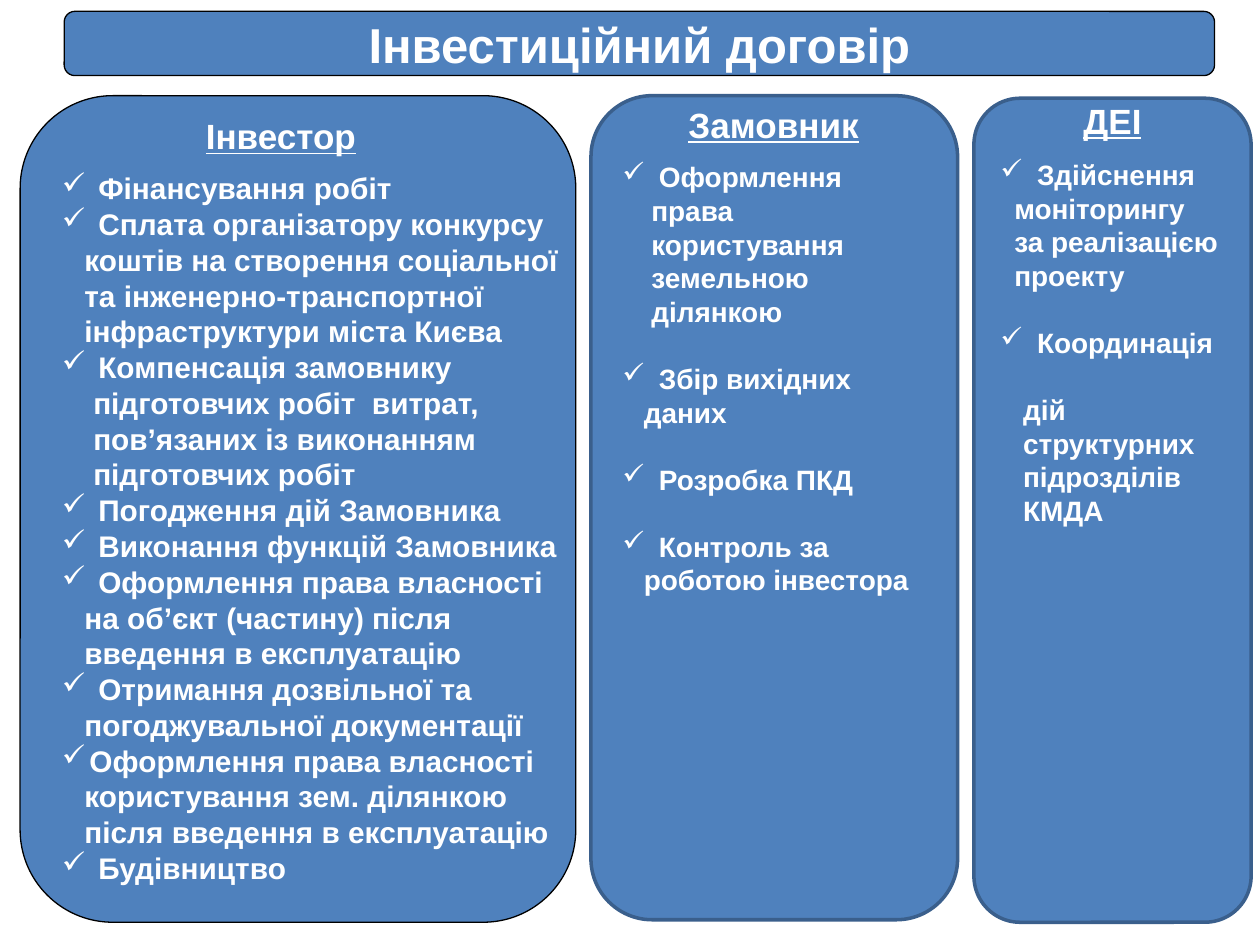
from pptx import Presentation
from pptx import util as u
from pptx.dml.color import RGBColor
from pptx.enum import shapes, text
from lxml import etree
from pptx.oxml import ns

BLUE = RGBColor(0x4F, 0x81, 0xBD)
EDGE = RGBColor(0x3A, 0x5F, 0x8C)
BLACK = RGBColor(0, 0, 0)
WHITE = RGBColor(0xFF, 0xFF, 0xFF)

ROUND = shapes.MSO_SHAPE.ROUNDED_RECTANGLE
PROCESS = shapes.MSO_SHAPE.FLOWCHART_ALTERNATE_PROCESS


class SlideBuilder:
    font = "Arial"
    text_indent = 0.29

    def __init__(self, presentation):
        self.slide = presentation.slides.add_slide(presentation.slide_layouts[5])

    def place(self, shape, box):
        shape.left, shape.top, shape.width, shape.height = map(u.Inches, box)

    def clear_margins(self, frame):
        frame.margin_left = frame.margin_right = 0
        frame.margin_top = frame.margin_bottom = 0
        frame.word_wrap = True

    def add_run(self, paragraph, words, size, underline=False):
        run = paragraph.add_run()
        run.text = words
        run.font.name = self.font
        run.font.size = u.Pt(size)
        run.font.bold = True
        run.font.underline = underline
        run.font.color.rgb = WHITE

    def panel(self, kind, box, line_color, line_width):
        shape = self.slide.shapes.add_shape(kind, *map(u.Inches, box))
        shape.shadow.inherit = False
        shape.fill.solid()
        shape.fill.fore_color.rgb = BLUE
        shape.line.color.rgb = line_color
        shape.line.width = u.Pt(line_width)

    def title(self, words, box):
        self.panel(PROCESS, box, BLACK, 0.75)
        title = self.slide.shapes.title
        self.place(title, box)
        tree = self.slide.shapes._spTree
        tree.append(title._element)
        frame = title.text_frame
        self.clear_margins(frame)
        frame.auto_size = text.MSO_AUTO_SIZE.NONE
        frame.vertical_anchor = text.MSO_ANCHOR.MIDDLE
        paragraph = frame.paragraphs[0]
        paragraph.alignment = text.PP_ALIGN.CENTER
        self.add_run(paragraph, words, 28)

    def text_box(self, box):
        frame = self.slide.shapes.add_textbox(*map(u.Inches, box)).text_frame
        self.clear_margins(frame)
        return frame

    def heading(self, words, center, top):
        width = 2
        frame = self.text_box((center - width / 2, top, width, 0.32))
        paragraph = frame.paragraphs[0]
        paragraph.alignment = text.PP_ALIGN.CENTER
        self.add_run(paragraph, words, 20, underline=True)

    def set_indent(self, paragraph, margin, bullet):
        properties = paragraph._p.get_or_add_pPr()
        properties.set("marL", str(u.Inches(margin)))
        properties.set("indent", str(-u.Inches(margin) if bullet else 0))
        if bullet:
            etree.SubElement(properties, ns.qn("a:buChar")).set("char", "✓")

    def checklist(self, box, items, size, spacing, gap=0):
        frame = self.text_box(box)
        paragraph = frame.paragraphs[0]
        for number, (margin, lines) in enumerate(items):
            for position, words in enumerate(lines):
                if number or position:
                    paragraph = frame.add_paragraph()
                bullet = position == 0
                paragraph.line_spacing = u.Pt(spacing)
                paragraph.space_before = u.Pt(gap if bullet and number else 0)
                first = 0.22 if words == TIGHT_ITEM else self.text_indent
                self.set_indent(paragraph, first if bullet else margin, bullet)
                self.add_run(paragraph, words, size)
        return frame


TIGHT_ITEM = "Оформлення права власності "

INVESTOR = [
    (0.18, ["Фінансування робіт"]),
    (0.18, ["Сплата організатору конкурсу", "коштів на створення соціальної",
            "та інженерно-транспортної", "інфраструктури міста Києва"]),
    (0.25, ["Компенсація замовнику", "підготовчих робіт  витрат,",
            "пов’язаних із виконанням", "підготовчих робіт"]),
    (0.18, ["Погодження дій Замовника"]),
    (0.18, ["Виконання функцій Замовника"]),
    (0.18, ["Оформлення права власності", "на об’єкт (частину) після",
            "введення в експлуатацію"]),
    (0.18, ["Отримання дозвільної та", "погоджувальної документації"]),
    (0.18, [TIGHT_ITEM, "користування зем. ділянкою",
            "після введення в експлуатацію"]),
    (0.18, ["Будівництво"]),
]
CUSTOMER = [
    (0.23, ["Оформлення", "права", "користування", "земельною", "ділянкою"]),
    (0.17, ["Збір вихідних", "даних"]),
    (0.17, ["Розробка ПКД"]),
    (0.17, ["Контроль за", "роботою інвестора"]),
]
DEPARTMENT = [
    (0.11, ["Здійснення", "моніторингу", "за реалізацією", "проекту"]),
    (0.18, ["Координація", "дій", "структурних", "підрозділів", "КМДА"]),
]


def main():
    presentation = Presentation()
    presentation.slide_width = u.Inches(10)
    presentation.slide_height = u.Inches(7.5)
    builder = SlideBuilder(presentation)

    builder.panel(ROUND, (4.69, 0.76, 2.91, 6.54), EDGE, 2)
    builder.panel(PROCESS, (0.16, 0.76, 4.41, 6.56), BLACK, 0.75)
    builder.panel(ROUND, (7.73, 0.78, 2.2, 6.54), EDGE, 2)
    builder.title("Інвестиційний договір", (0.51, 0.09, 9.13, 0.51))

    builder.heading("Інвестор", 2.23, 0.91)
    builder.checklist((0.49, 1.35, 4.08, 5.7), INVESTOR, 17, 20.43)

    builder.heading("Замовник", 6.14, 0.82)
    builder.checklist((4.94, 1.27, 2.6, 3.5), CUSTOMER, 16, 19.2, 19.2)

    builder.heading("ДЕІ", 8.83, 0.79)
    department = builder.checklist((7.94, 1.25, 1.95, 3), DEPARTMENT, 16, 19.2, 19.2)
    department.paragraphs[5].space_before = u.Pt(19.2)

    presentation.save("out.pptx")


if __name__ == "__main__":
    main()
